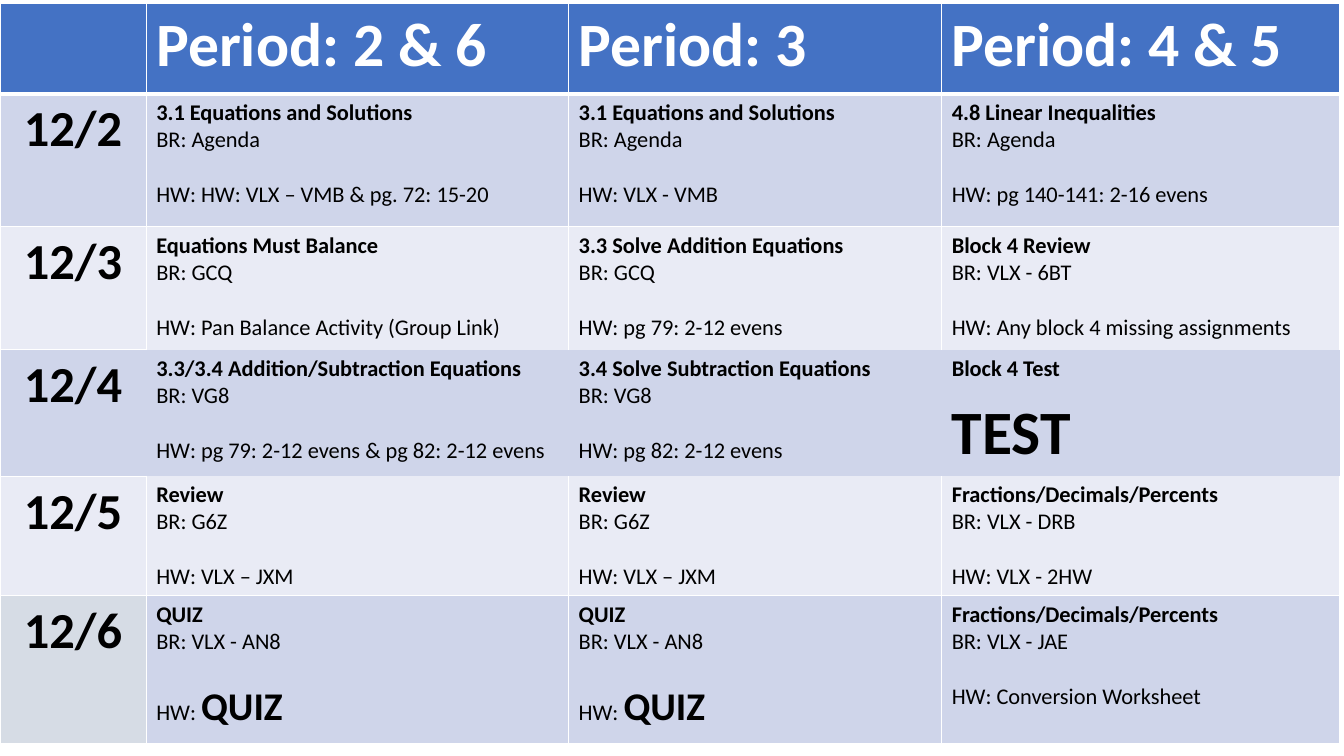
"""Build a one-slide weekly class agenda table."""
from lxml.etree import SubElement
from pptx import Presentation
from pptx.dml.color import RGBColor
from pptx.enum.text import PP_ALIGN
from pptx.oxml.ns import qn
from pptx.util import Inches, Pt

HUES = {
    "head": "4472C4",
    "dark": "CFD5EA",
    "light": "E9EBF5",
    "gray": "D6DCE5",
    "white": "FFFFFF",
    "black": "000000",
}
HEADS = ["", "Period: 2 & 6", "Period: 3", "Period: 4 & 5"]
DAYS = [
    ("12/2", [
        ("3.1 Equations and Solutions", "BR: Agenda", "HW: HW: VLX – VMB & pg. 72: 15-20"),
        ("3.1 Equations and Solutions", "BR: Agenda", "HW: VLX - VMB"),
        ("4.8 Linear Inequalities", "BR: Agenda", "HW: pg 140-141: 2-16 evens"),
    ]),
    ("12/3", [
        ("Equations Must Balance", "BR: GCQ", "HW: Pan Balance Activity (Group Link)"),
        ("3.3 Solve Addition Equations", "BR: GCQ", "HW: pg 79: 2-12 evens"),
        ("Block 4 Review", "BR: VLX - 6BT", "HW: Any block 4 missing assignments"),
    ]),
    ("12/4", [
        ("3.3/3.4 Addition/Subtraction Equations", "BR: VG8",
         "HW: pg 79: 2-12 evens & pg 82: 2-12 evens"),
        ("3.4 Solve Subtraction Equations", "BR: VG8", "HW: pg 82: 2-12 evens"),
        ("Block 4 Test", "TEST"),
    ]),
    ("12/5", [
        ("Review", "BR: G6Z", "HW: VLX – JXM"),
        ("Review", "BR: G6Z", "HW: VLX – JXM"),
        ("Fractions/Decimals/Percents", "BR: VLX - DRB", "HW: VLX - 2HW"),
    ]),
    ("12/6", [
        ("QUIZ", "BR: VLX - AN8", "HW: ", "QUIZ"),
        ("QUIZ", "BR: VLX - AN8", "HW: ", "QUIZ"),
        ("Fractions/Decimals/Percents", "BR: VLX - JAE", "HW: Conversion Worksheet"),
    ]),
]
WIDTHS = [1.45, 4.19, 3.7, 3.95]
HEIGHTS = [0.9, 1.32, 1.22, 1.23, 1.14, 1.47]
FILLS = ["head", "dark", "light", "dark", "light", "dark"]
EDGES = {2: "LRT", 3: "", 4: "LRB"}


def style(run, size, bold, hue="black"):
    run.font.name = "Calibri"
    run.font.size = Pt(size)
    run.font.bold = bold
    run.font.color.rgb = RGBColor.from_string(HUES[hue])


def paint(cell, hue, sides, base):
    props = cell._tc.get_or_add_tcPr()
    for side in "LRTB":
        width = base if side == "B" else 1
        line = SubElement(props, qn(f"a:ln{side}"), w=str(Pt(width)))
        if side in sides:
            fill = SubElement(line, qn("a:solidFill"))
            SubElement(fill, qn("a:srgbClr"), val=HUES["white"])
        else:
            SubElement(line, qn("a:noFill"))
    cell.fill.solid()
    cell.fill.fore_color.rgb = RGBColor.from_string(HUES[hue])


deck = Presentation()
deck.slide_width, deck.slide_height = Inches(13.33), Inches(7.5)
slide = deck.slides.add_slide(deck.slide_layouts[6])
frame = slide.shapes.add_table(
    len(HEIGHTS), len(WIDTHS), Inches(0), Inches(0.03),
    Inches(sum(WIDTHS)), Inches(sum(HEIGHTS)))
table = frame.table
for col, width in zip(table.columns, WIDTHS):
    col.width = Inches(width)
for row, height in zip(table.rows, HEIGHTS):
    row.height = Inches(height)

for r, hue in enumerate(FILLS):
    for c in range(len(WIDTHS)):
        sides = EDGES.get(r, "LRTB") if c else "LTB" if r == 3 else "LRTB"
        tint = "gray" if (r, c) == (5, 0) else hue
        paint(table.cell(r, c), tint, sides, 1 if r else 3)

for c, head in enumerate(HEADS[1:], 1):
    para = table.cell(0, c).text_frame.paragraphs[0]
    para.text = head
    style(para.runs[0], 44, True, "white")

for r, (day, plans) in enumerate(DAYS, 1):
    para = table.cell(r, 0).text_frame.paragraphs[0]
    para.text = day
    para.alignment = PP_ALIGN.CENTER
    style(para.runs[0], 36, True)
    for c, (topic, *tasks) in enumerate(plans, 1):
        body = table.cell(r, c).text_frame
        body.text = "\n".join([topic] + tasks[:2])
        for para in body.paragraphs:
            style(para.runs[0], 16, para.text == topic)
        last = body.paragraphs[-1]
        last.space_before = Pt(19.5)
        if tasks == ["TEST"]:
            last.space_before = Pt(9.8)
            style(last.runs[0], 44, True)
        for word in tasks[2:]:
            run = last.add_run()
            run.text = word
            style(run, 28, True)

deck.save("out.pptx")
